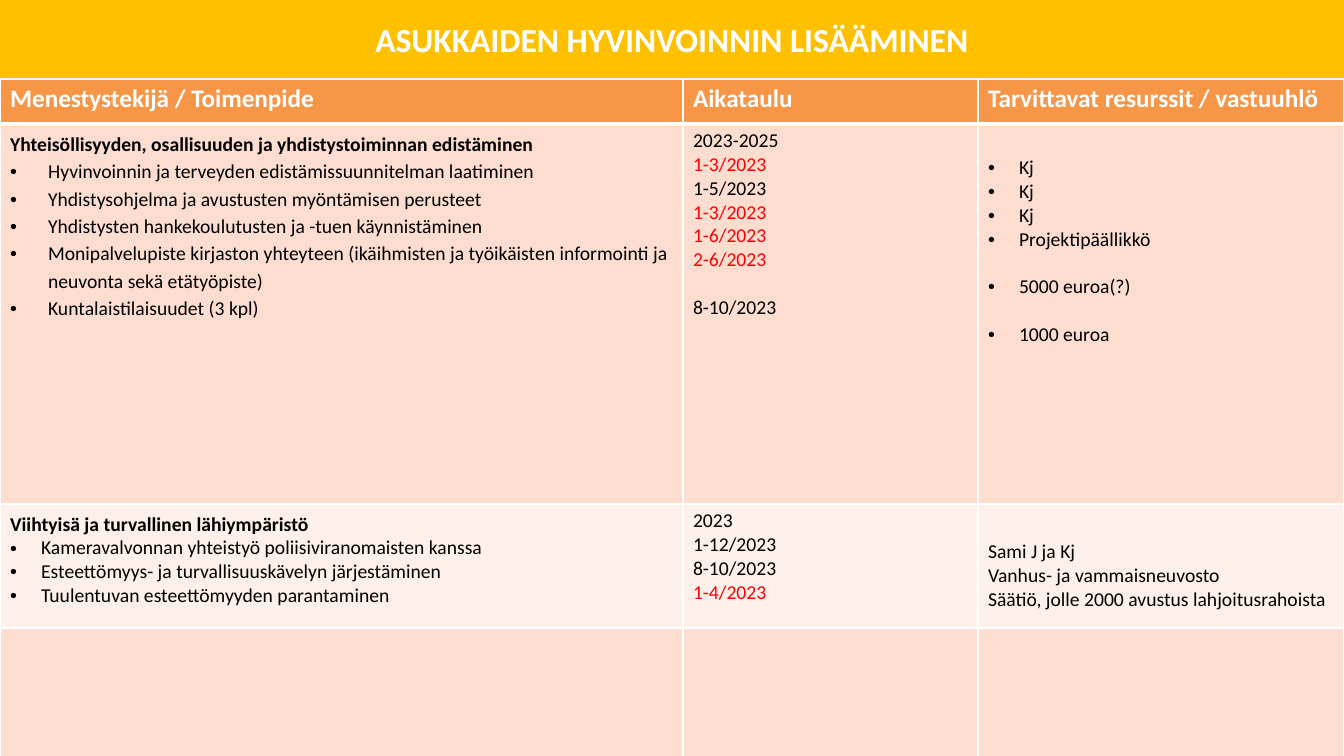
"""Build the slide on improving residents' wellbeing."""
from dataclasses import dataclass
from functools import partial

from lxml.etree import SubElement
from pptx import Presentation
from pptx.dml.color import RGBColor as RGB
from pptx.enum.shapes import MSO_SHAPE as SHAPE
from pptx.enum.text import MSO_ANCHOR as ANCHOR, PP_ALIGN as ALIGN
from pptx.oxml import parse_xml
from pptx.oxml.ns import nsdecls, qn
from pptx.util import Pt


@dataclass(frozen=True)
class Theme:
    """Colours, font and type sizes of the slide."""
    font: str = "Calibri"
    banner: str = "FFC000"
    header: str = "F79646"
    band_dark: str = "FCDDCF"
    band_light: str = "FDEFE9"
    white: str = "FFFFFF"
    black: str = "000000"
    red: str = "FF0000"
    title_size: int = 24
    header_size: int = 18
    body_size: int = 14


@dataclass(frozen=True)
class Line:
    """One paragraph; indent is the bullet's hanging indent in px."""
    text: str
    color: str = Theme.black
    bold: bool = False
    size: int = Theme.body_size
    indent: int = 0
    spacing: float = 1.0
    gap: int = 0


@dataclass(frozen=True)
class Cell:
    """Paragraphs of a table cell and its top margin in px."""
    lines: tuple = ()
    top: int = 5


T = Theme()
SCALE = 914400 / 100.8
WIDTH, HEIGHT, BANNER = 1344, 756, 79
COLUMNS = (683, 295, 366)
ROWS = (45, 380, 124, 184)
FILLS = (T.header, T.band_dark, T.band_light, T.band_dark)
SKIPPED_LINE = 17

Head = partial(Line, color=T.white, bold=True, size=T.header_size)
Topic = partial(Line, bold=True, spacing=1.15)
Action = partial(Line, indent=38, spacing=1.15)
Item = partial(Line, indent=31)
Red = partial(Line, color=T.red)

CONTENT = (
    (
        Cell((Head("Menestystekijä / Toimenpide"),)),
        Cell((Head("Aikataulu"),)),
        Cell((Head("Tarvittavat resurssit / vastuuhlö"),)),
    ),
    (
        Cell((
            Topic("Yhteisöllisyyden, osallisuuden ja yhdistystoiminnan edistäminen"),
            Action("Hyvinvoinnin ja terveyden edistämissuunnitelman laatiminen"),
            Action("Yhdistysohjelma ja avustusten myöntämisen perusteet"),
            Action("Yhdistysten hankekoulutusten ja -tuen käynnistäminen"),
            Action("Monipalvelupiste kirjaston yhteyteen (ikäihmisten ja "
                   "työikäisten informointi ja neuvonta sekä etätyöpiste)"),
            Action("Kuntalaistilaisuudet (3 kpl)"),
        )),
        Cell((
            Line("2023-2025"),
            Red("1-3/2023"),
            Line("1-5/2023"),
            Red("1-3/2023"),
            Red("1-6/2023"),
            Red("2-6/2023"),
            Line("8-10/2023", gap=SKIPPED_LINE),
        )),
        Cell((
            Item("Kj"),
            Item("Kj"),
            Item("Kj"),
            Item("Projektipäällikkö"),
            Item("5000 euroa(?)", gap=SKIPPED_LINE),
            Item("1000 euroa", gap=SKIPPED_LINE),
        ), top=32),
    ),
    (
        Cell((
            Topic("Viihtyisä ja turvallinen lähiympäristö"),
            Item("Kameravalvonnan yhteistyö poliisiviranomaisten kanssa"),
            Item("Esteettömyys- ja turvallisuuskävelyn järjestäminen"),
            Item("Tuulentuvan esteettömyyden parantaminen"),
        )),
        Cell((
            Line("2023"),
            Line("1-12/2023"),
            Line("8-10/2023"),
            Red("1-4/2023"),
        )),
        Cell((
            Line("Sami J ja Kj"),
            Line("Vanhus- ja vammaisneuvosto"),
            Line("Säätiö, jolle 2000 avustus lahjoitusrahoista"),
        ), top=36),
    ),
    (Cell(), Cell(), Cell()),
)


def px(n):
    """Turn whole pixels into EMU."""
    return round(n * SCALE)


def add_bullet(p, indent):
    """Give a paragraph a round bullet with a hanging indent."""
    pPr = p._p.get_or_add_pPr()
    pPr.set("marL", str(px(indent)))
    pPr.set("indent", str(-px(indent)))
    SubElement(pPr, qn("a:buFont"), typeface="Arial")
    SubElement(pPr, qn("a:buChar"), char="•")


def write_lines(tf, lines, align=ALIGN.LEFT):
    """Write the lines as paragraphs of a text frame."""
    for i, line in enumerate(lines):
        p = tf.add_paragraph() if i else tf.paragraphs[0]
        if line.indent:
            add_bullet(p, line.indent)
        p.alignment = align
        p.line_spacing = line.spacing
        if line.gap:
            p.space_before = Pt(line.gap)
        r = p.add_run()
        r.text = line.text
        r.font.name = T.font
        r.font.size = Pt(line.size)
        r.font.bold = line.bold
        r.font.color.rgb = RGB.from_string(line.color)


def add_banner(s):
    """Add the coloured band across the top."""
    sp = s.shapes.add_shape(SHAPE.RECTANGLE, 0, 0, px(WIDTH), px(BANNER))
    sp.shadow.inherit = False
    sp.fill.solid()
    sp.fill.fore_color.rgb = RGB.from_string(T.banner)
    sp.line.fill.background()


def add_title(s, text):
    """Add the centred title over the band."""
    sp = s.shapes.add_textbox(px(67), 0, px(1210), px(BANNER))
    tf = sp.text_frame
    tf.word_wrap = True
    tf.vertical_anchor = ANCHOR.MIDDLE
    write_lines(tf, [Head(text, size=T.title_size)], ALIGN.CENTER)


def set_borders(cell, top, bottom):
    """Draw white cell borders, with top and bottom widths in points."""
    tcPr = cell._tc.get_or_add_tcPr()
    widths = {"lnL": 1, "lnR": 1, "lnT": top, "lnB": bottom}
    for i, (side, width) in enumerate(widths.items()):
        tcPr.insert(i, parse_xml(
            f'<a:{side} {nsdecls("a")} w="{Pt(width)}"><a:solidFill>'
            f'<a:srgbClr val="{T.white}"/></a:solidFill></a:{side}>'))


def add_plan_table(s):
    """Add the table of actions, schedule and resources."""
    table = s.shapes.add_table(len(ROWS), len(COLUMNS), 0, px(BANNER),
                               px(sum(COLUMNS)), px(sum(ROWS))).table
    table.first_row = table.horz_banding = False
    for column, width in zip(table.columns, COLUMNS):
        column.width = px(width)
    for i, (row, height) in enumerate(zip(table.rows, ROWS)):
        row.height = px(height)
        for cell, content in zip(row.cells, CONTENT[i]):
            cell.fill.solid()
            cell.fill.fore_color.rgb = RGB.from_string(FILLS[i])
            cell.margin_top = px(content.top)
            set_borders(cell, 3 if i == 1 else 1, 3 if i == 0 else 1)
            write_lines(cell.text_frame, content.lines)


def main():
    """Build and save the slide."""
    prs = Presentation()
    prs.slide_width, prs.slide_height = px(WIDTH), px(HEIGHT)
    s = prs.slides.add_slide(prs.slide_layouts[6])
    add_banner(s)
    add_title(s, "ASUKKAIDEN HYVINVOINNIN LISÄÄMINEN")
    add_plan_table(s)
    prs.save("out.pptx")


if __name__ == "__main__":
    main()
